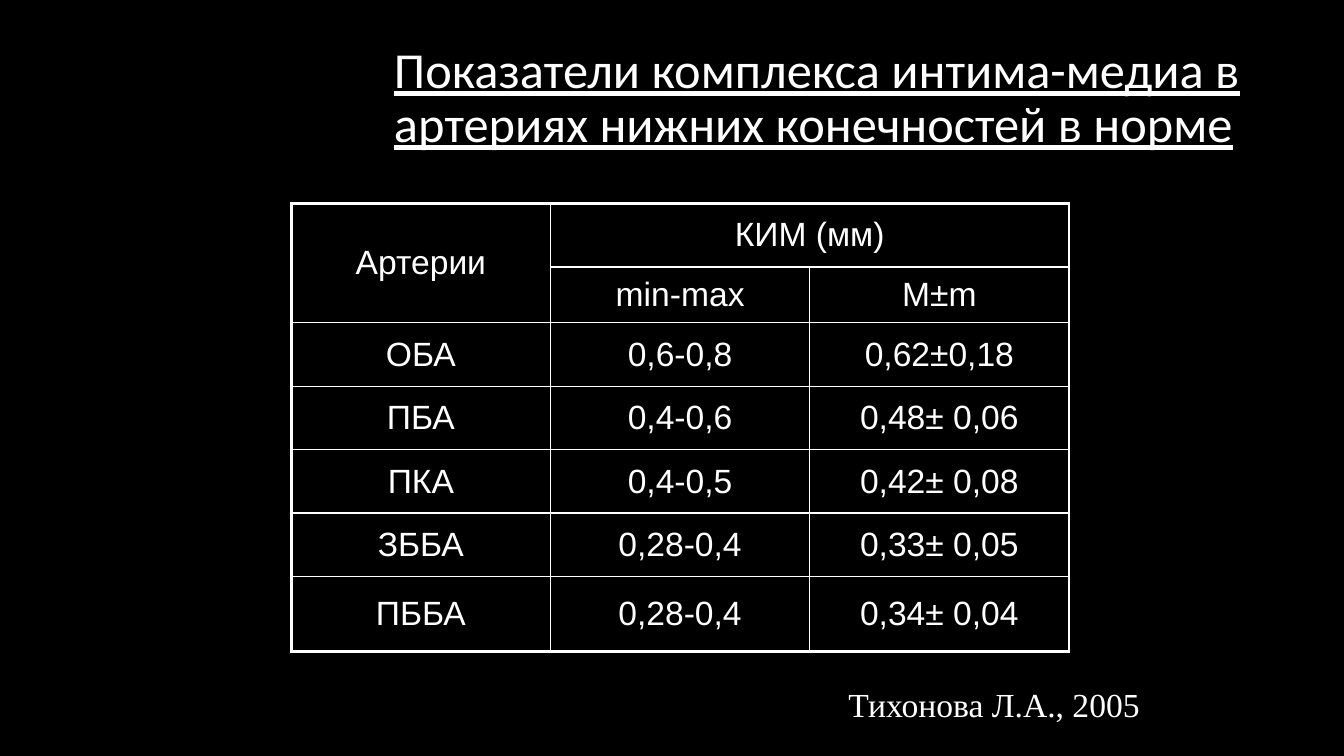
import pptx
import pptx.dml.color
import pptx.enum.text
import pptx.oxml
import pptx.oxml.ns
import pptx.util

Cm = pptx.util.Cm
Pt = pptx.util.Pt
ALIGN = pptx.enum.text.PP_ALIGN
ANCHOR = pptx.enum.text.MSO_ANCHOR

BLACK, WHITE = "000000", "FFFFFF"
THIN, THICK = 1, 2.25
ROWS = [
    ("Артерии", "КИМ (мм)", ""),
    ("", "min-max", "M±m"),
    ("ОБА", "0,6-0,8", "0,62±0,18"),
    ("ПБА", "0,4-0,6", "0,48± 0,06"),
    ("ПКА", "0,4-0,5", "0,42± 0,08"),
    ("ЗББА", "0,28-0,4", "0,33± 0,05"),
    ("ПББА", "0,28-0,4", "0,34± 0,04"),
]
ROW_HEIGHTS = [1.6, 1.4, 1.6, 1.6, 1.6, 1.6, 1.88]


def color(value):
    """Turn a hex string into a colour."""
    return pptx.dml.color.RGBColor.from_string(value)


def write(tf, text, font="Arial", size=24, underline=False,
          align=ALIGN.LEFT, line_spacing=1.0):
    """Write one white paragraph into a text frame."""
    p = tf.paragraphs[0]
    p.alignment = align
    p.line_spacing = line_spacing
    r = p.add_run()
    r.text = text
    r.font.name = font
    r.font.size = Pt(size)
    r.font.underline = underline
    r.font.color.rgb = color(WHITE)


def add_text(s, text, left, top, width, height, anchor=ANCHOR.TOP, **style):
    """Add a wrapped text box in the given box, in centimetres."""
    tf = s.shapes.add_textbox(Cm(left), Cm(top), Cm(width), Cm(height)).text_frame
    tf.word_wrap = True
    tf.vertical_anchor = anchor
    write(tf, text, **style)


def set_borders(cell, **widths):
    """Draw white cell borders; widths in points are keyed L, R, T, B."""
    tc_pr = cell._tc.get_or_add_tcPr()
    for i, (side, width) in enumerate(widths.items()):
        tc_pr.insert(i, pptx.oxml.parse_xml(
            f'<a:ln{side} {pptx.oxml.ns.nsdecls("a")} w="{int(Pt(width))}">'
            f'<a:solidFill><a:srgbClr val="{WHITE}"/></a:solidFill></a:ln{side}>'))


def add_arteries_table(s, left, top, width):
    """Add the table of arteries with a thick outer frame."""
    n_rows, n_cols = len(ROWS), len(ROWS[0])
    table = s.shapes.add_table(n_rows, n_cols, Cm(left), Cm(top),
                               Cm(width), Cm(sum(ROW_HEIGHTS))).table
    table.first_row = table.horz_banding = False
    for row, height in zip(table.rows, ROW_HEIGHTS):
        row.height = Cm(height)
    for column in table.columns:
        column.width = Cm(width / n_cols)
    table.cell(0, 0).merge(table.cell(1, 0))
    table.cell(0, 1).merge(table.cell(0, 2))

    for i, texts in enumerate(ROWS):
        for j, text in enumerate(texts):
            cell = table.cell(i, j)
            cell.fill.background()
            last = j + (cell.span_width if cell.is_merge_origin else 1)
            set_borders(cell,
                        L=THICK if j == 0 else THIN,
                        R=THICK if last == n_cols else THIN,
                        T=THICK if i == 0 else THIN,
                        B=THICK if i == n_rows - 1 else THIN)
            if text:
                cell.vertical_anchor = ANCHOR.MIDDLE
                write(cell.text_frame, text, align=ALIGN.CENTER)


def build_slide(prs):
    """Build the slide on a black background."""
    s = prs.slides.add_slide(prs.slide_layouts[6])
    s.background.fill.solid()
    s.background.fill.fore_color.rgb = color(BLACK)
    add_text(s, "Показатели комплекса интима-медиа в артериях нижних конечностей в норме",
             9.68, 0.91, 24.19, 3.18, anchor=ANCHOR.MIDDLE,
             font="Calibri", size=36, underline=True, line_spacing=0.9)
    add_arteries_table(s, 7.34, 5.13, 19.6)
    add_text(s, "Тихонова Л.А., 2005", 21.13, 17.12, 9.91, 1.27,
             font="Times New Roman")


def main():
    """Create and save the presentation."""
    prs = pptx.Presentation()
    prs.slide_width, prs.slide_height = Cm(33.87), Cm(19.05)
    build_slide(prs)
    prs.save("out.pptx")


if __name__ == "__main__":
    main()
